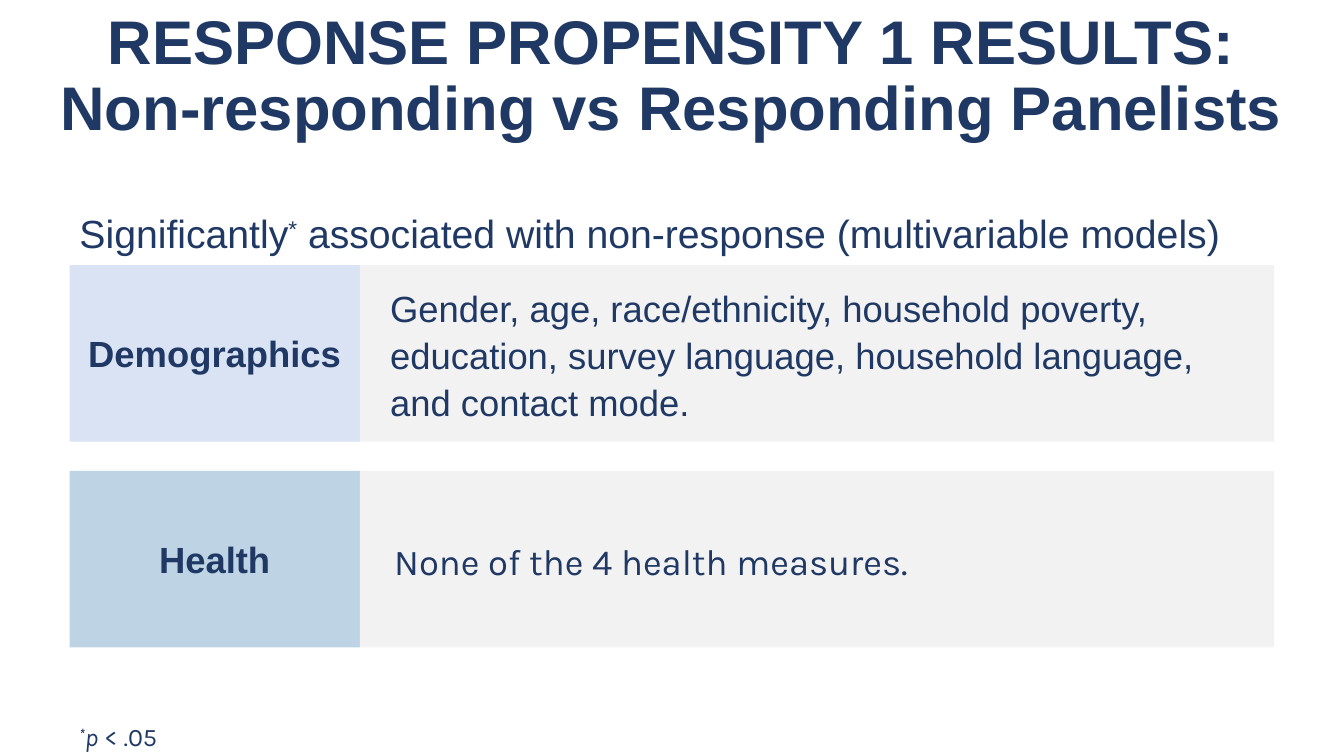
from dataclasses import dataclass

from pptx import Presentation
from pptx.dml.color import RGBColor
from pptx.enum.shapes import MSO_SHAPE as Preset
from pptx.enum.text import MSO_ANCHOR as Anchor, MSO_AUTO_SIZE as AutoSize, PP_ALIGN as Align
from pptx.util import Pt


@dataclass(frozen=True)
class Theme:
    """Colours, fonts and type sizes of the slide."""
    navy: str = "1F3864"
    panel: str = "F2F2F2"
    lavender: str = "DAE3F3"
    steel: str = "BED3E3"
    heading_font: str = "Arial"
    note_font: str = "Karla"
    title: int = 44
    lead: int = 28
    body: int = 26
    note: int = 18


def add_text(paragraph, text, *, font, size, color, bold=False, italic=False, superscript=False):
    """Append formatted text to a paragraph, turning newlines into line breaks."""
    for index, line in enumerate(text.split("\n")):
        if index:
            paragraph.add_line_break()
        run = paragraph.add_run()
        run.text = line
        run.font.name = font
        run.font.size = Pt(size)
        run.font.bold = bold
        run.font.italic = italic
        run.font.color.rgb = RGBColor.from_string(color)
        if superscript:
            run._r.get_or_add_rPr().set("baseline", "30000")


class SlideBuilder:
    """Adds styled elements to the current slide."""

    def __init__(self, slide, theme):
        """Keep the slide and its theme."""
        self.slide = slide
        self.theme = theme

    def fill_frame(self, shape, pieces, *, size, font=None, align=Align.LEFT,
                   anchor=Anchor.MIDDLE, spacing=1.0, inset=7.2):
        """Write (text, format) pieces as one paragraph in a shape."""
        frame = shape.text_frame
        frame.word_wrap = True
        frame.vertical_anchor = anchor
        frame.margin_left = Pt(inset)
        paragraph = frame.paragraphs[0]
        paragraph.alignment = align
        paragraph.line_spacing = spacing
        for text, style in pieces:
            add_text(paragraph, text, font=font or self.theme.heading_font, size=size,
                     color=self.theme.navy, **style)

    def text_box(self, left, top, width, height, pieces, *, grow=False, **layout):
        """Add a text box."""
        box = self.slide.shapes.add_textbox(Pt(left), Pt(top), Pt(width), Pt(height))
        self.fill_frame(box, pieces, **layout)
        if grow:
            box.text_frame.auto_size = AutoSize.SHAPE_TO_FIT_TEXT

    def panel(self, left, top, width, height, fill, pieces, **layout):
        """Add a filled rectangle with text."""
        shape = self.slide.shapes.add_shape(Preset.RECTANGLE, Pt(left), Pt(top), Pt(width), Pt(height))
        shape.shadow.inherit = False
        shape.fill.solid()
        shape.fill.fore_color.rgb = RGBColor.from_string(fill)
        shape.line.fill.background()
        self.fill_frame(shape, pieces, size=self.theme.body, **layout)


def main():
    """Build and save the slide."""
    theme = Theme()
    presentation = Presentation()
    presentation.slide_width, presentation.slide_height = Pt(960), Pt(540)
    builder = SlideBuilder(presentation.slides.add_slide(presentation.slide_layouts[6]), theme)

    left, label_width, detail_width = 49.7, 207.4, 653
    first_top, row_height, row_pitch = 189.4, 126, 147
    rows = [
        ("Demographics", theme.lavender,
         "Gender, age, race/ethnicity, household poverty, education, "
         "survey language, household language, and contact mode.",
         theme.heading_font, 21.6),
        ("Health", theme.steel, "None of the 4 health measures.", theme.note_font, 24.5),
    ]

    title = "RESPONSE PROPENSITY 1 RESULTS:\nNon-responding vs Responding Panelists"
    builder.text_box(0, 1.4, 960, 108, [(title, {"bold": True})],
                     size=theme.title, align=Align.CENTER, spacing=0.9)

    for index, (label, color, detail, font, inset) in enumerate(rows):
        top = first_top + index * row_pitch
        builder.panel(left, top, label_width, row_height, color, [(label, {"bold": True})],
                      align=Align.CENTER)
        builder.panel(left + label_width, top, detail_width, row_height, theme.panel,
                      [(detail, {})], font=font, inset=inset, spacing=1.07)

    lead = [("Significantly", {}), ("*", {"superscript": True}),
            (" associated with non-response (multivariable models)", {})]
    builder.text_box(left, 146.2, label_width + detail_width, 41, lead,
                     size=theme.lead, anchor=Anchor.TOP, grow=True)

    note = [("*", {"bold": True, "italic": True, "superscript": True}),
            ("p", {"italic": True}), (" < .05", {})]
    builder.text_box(left, 512, 85, 28.8, note, size=theme.note, font=theme.note_font,
                     anchor=Anchor.TOP, grow=True)

    presentation.save("out.pptx")


if __name__ == "__main__":
    main()
